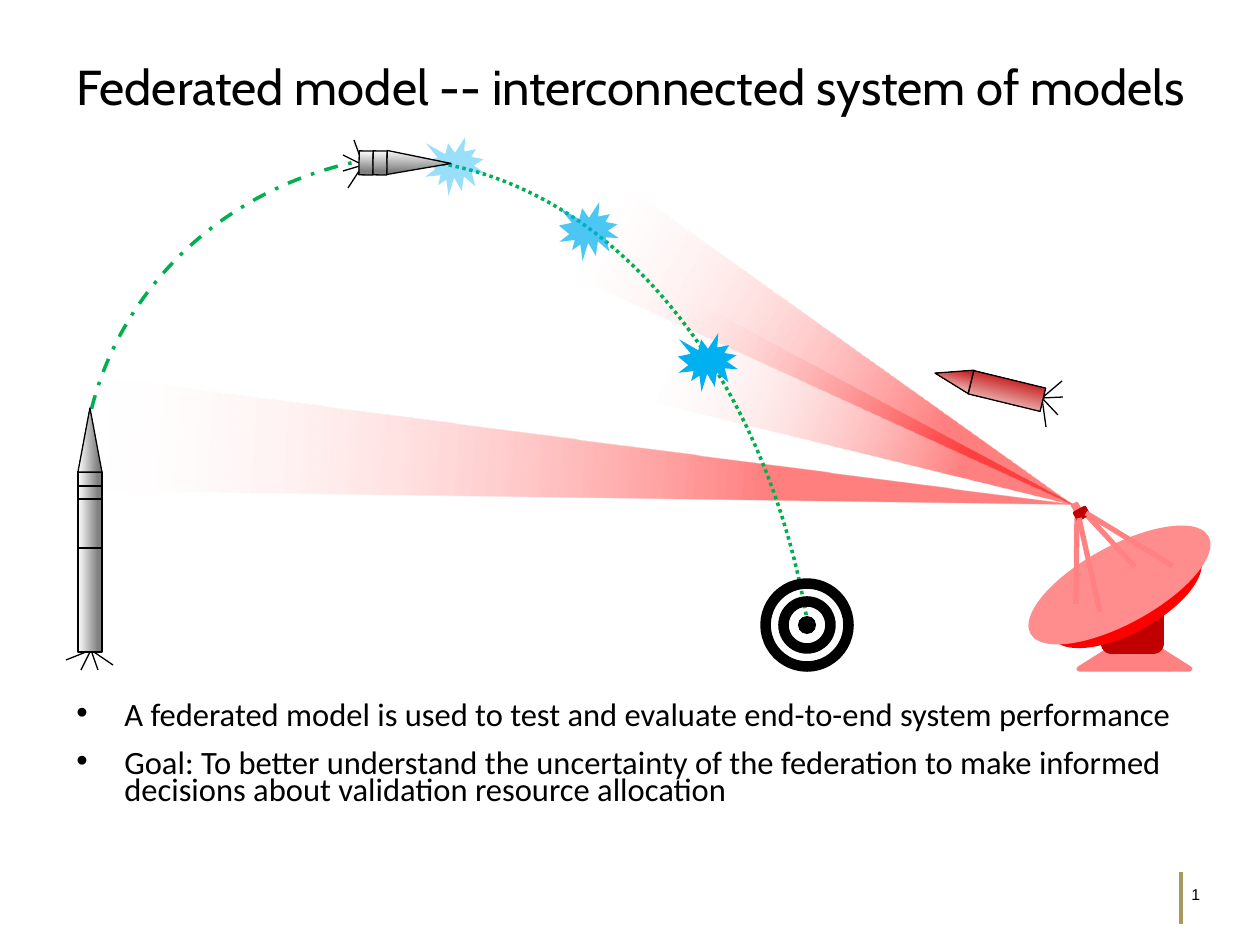
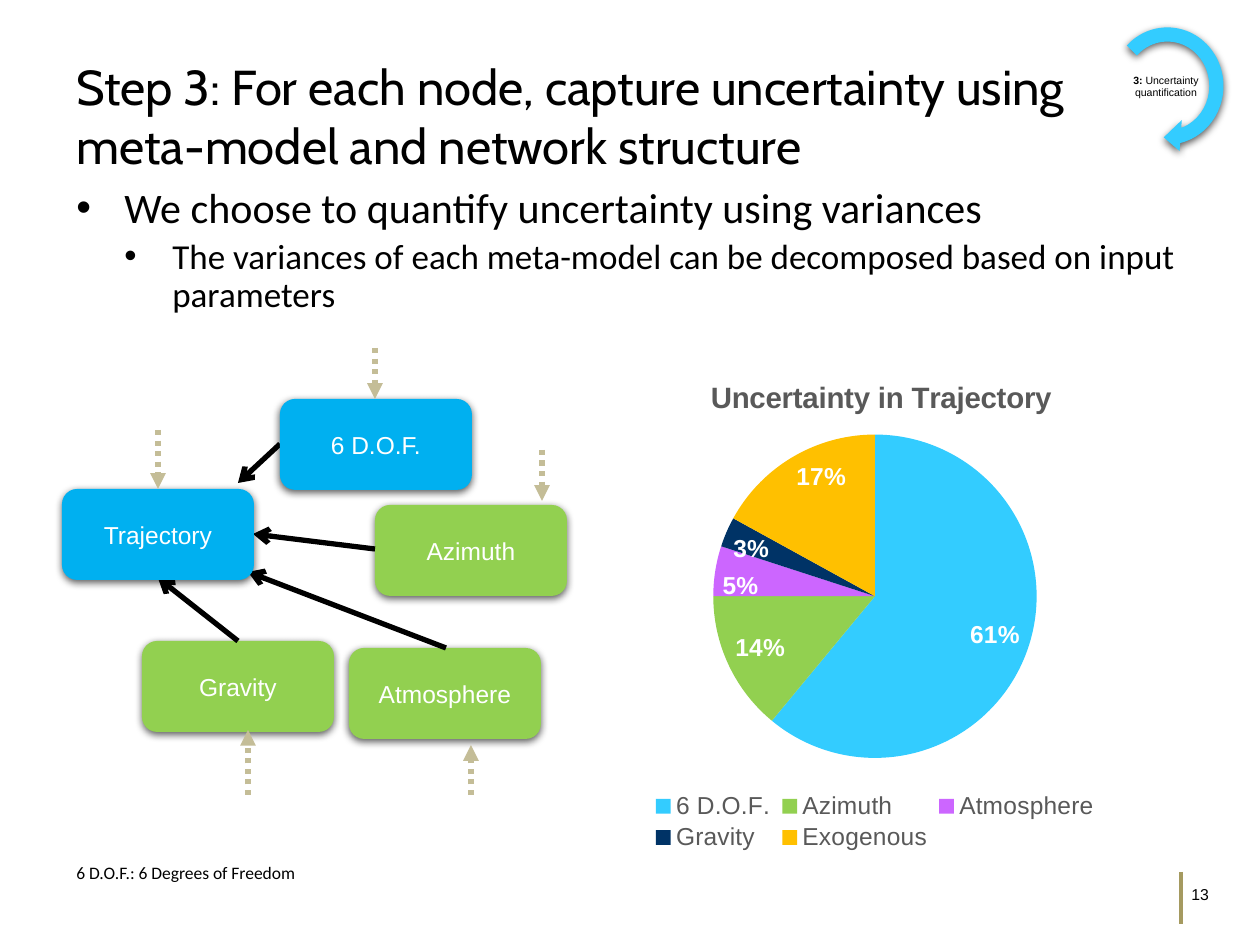
from lxml import etree
from pptx import Presentation
from pptx.chart.data import CategoryChartData
from pptx.dml.color import RGBColor
from pptx.enum.chart import XL_CHART_TYPE, XL_LABEL_POSITION, XL_LEGEND_POSITION
from pptx.enum.dml import MSO_LINE
from pptx.enum.shapes import MSO_CONNECTOR, MSO_SHAPE
from pptx.enum.text import MSO_ANCHOR, PP_ALIGN
from pptx.oxml.ns import qn
from pptx.util import Emu, Pt

RECT, ROUNDED = MSO_SHAPE.RECTANGLE, MSO_SHAPE.ROUNDED_RECTANGLE
TRIANGLE, OVAL = MSO_SHAPE.ISOSCELES_TRIANGLE, MSO_SHAPE.OVAL
CHORD, ARC = MSO_SHAPE.CHORD, MSO_SHAPE.ARC
BURST, CYCLE_ARROW = MSO_SHAPE.EXPLOSION1, MSO_SHAPE.CIRCULAR_ARROW
STRAIGHT = MSO_CONNECTOR.STRAIGHT
DASH_DOT, DOTTED = MSO_LINE.DASH_DOT, MSO_LINE.ROUND_DOT
MIDDLE, CENTER = MSO_ANCHOR.MIDDLE, PP_ALIGN.CENTER
PIE, INSIDE_END = XL_CHART_TYPE.PIE, XL_LABEL_POSITION.INSIDE_END
BOTTOM = XL_LEGEND_POSITION.BOTTOM

EMU_PER_PX = 914400 / 126
COLORS = {
    "black": "000000", "white": "FFFFFF", "grey": "808080", "chart_text": "595959",
    "khaki": "A59A60", "sand": "C4BD97", "blue": "00B0F0", "sky": "33CCFF",
    "green": "92D050", "path_green": "00B050", "violet": "CC66FF",
    "navy": "003366", "amber": "FFC000",
    "red": "FF0000", "dark_red": "C00000", "pink": "FF8181", "dish": "FF8D8D",
}

# Gradients: (position, colour, opacity) stops, then clockwise angle
BEAM = ((0.31, "red", 50), (1, "white", 0)), 90
STEEL = ((0.16, "grey", 100), (1, "white", 100)), 180
RED_STEEL = ((0.16, "dark_red", 100), (1, "white", 100)), 180

# Slide 1
FEDERATION_TITLE = "Federated model -- interconnected system of models"
FEDERATION_BULLETS = [
    "A federated model is used to test and evaluate end-to-end system performance",
    "Goal: To better understand the uncertainty of the federation to make informed "
    "decisions about validation resource allocation",
]
BEAMS = [((519, -33, 115, 1003), 94.1), ((788, 101, 103, 538), 120),
         ((823, 215, 107, 428), 110.8)]
DISH_TILT = 331.4
DISH_STRUTS = [((1085, 513), (1135, 567)), ((1077, 518), (1076, 604))]
FRONT_STRUTS = [((1079, 518), (1100, 612)), ((1086, 513), (1173, 566))]
ROCKETS = [
    {"hub": (1042, 398), "fins": [(1063, 397), (1046, 427), (1062, 381), (1058, 415)],
     "metal": RED_STEEL, "turn": 283.7,
     "stages": [(995, 354, 24, 74)], "nose": (941, 359, 24, 37)},
    {"hub": (91, 650), "fins": [(98, 670), (66, 660), (113, 665), (81, 670)],
     "metal": STEEL, "turn": 0,
     "stages": [(78, 548, 24, 104), (78, 499, 24, 49), (78, 486, 24, 13),
                (78, 472, 24, 14)], "nose": (78, 408, 24, 64)},
    {"hub": (363, 165), "fins": [(343, 171), (354, 140), (348, 188), (343, 155)],
     "metal": STEEL, "turn": 90.9,
     "stages": [(354, 156, 24, 14), (368, 156, 24, 14)], "nose": (407, 131, 24, 64)},
]
TARGET_CENTER, TARGET_RINGS, BULLSEYE = (807, 625), (83, 47), 18
BURSTS = [(425, 137, 40), (559, 202, 70), (678, 333, 100)]

# Slide 2
STEP_TITLE = ("Step 3: For each node, capture uncertainty using meta-model "
              "and network structure")
STEP_BULLETS = [
    "We choose to quantify uncertainty using variances",
    "The variances of each meta-model can be decomposed based on input parameters",
]
FOOTNOTE = "6 D.O.F.: 6 Degrees of Freedom"
INPUT_NODES = [("Gravity", 142, 641), ("Atmosphere", 349, 648), ("Azimuth", 375, 505)]
MAIN_NODES = [("Trajectory", 62, 489), ("6 D.O.F.", 280, 399)]
NODE_SIZE = (192, 91)
NODE_ARROWS = [((280, 444), (238, 483)), ((375, 549), (253, 534)),
               ((446, 648), (248, 572)), ((238, 641), (158, 578))]
OUTSIDE_ARROWS = [(158, 430, 489), (375, 348, 399), (542, 450, 501),
                  (471, 795, 745), (248, 795, 730)]  # x, from y, to y
UNCERTAINTY = [("6 D.O.F.", 61, "sky"), ("Azimuth", 14, "green"),
               ("Atmosphere", 5, "violet"), ("Gravity", 3, "navy"),
               ("Exogenous", 17, "amber")]


def px(value):
    return Emu(round(value * EMU_PER_PX))


def rgb(name):
    return RGBColor.from_string(COLORS[name])


def style_font(font, size, color="black", face="Arial", bold=False):
    font.size, font.name, font.bold = Pt(size), face, bold
    font.color.rgb = rgb(color)


def write(frame, paragraphs, size=14, color="black", face="Arial", align=None,
          anchor=None, spacing=None, before=0, bullets=False, inset=None):
    """Fill a text frame. A paragraph is a string or a list of (text, bold) runs;
    size and before may be lists with one entry per paragraph, and each
    different size then marks a deeper bullet level."""
    frame.word_wrap = True
    if anchor is not None:
        frame.vertical_anchor = anchor
    if inset is not None:
        frame.margin_left = frame.margin_right = px(inset)
        frame.margin_top = frame.margin_bottom = px(inset)
    sizes = size if isinstance(size, list) else [size] * len(paragraphs)
    for index, content in enumerate(paragraphs):
        paragraph = frame.add_paragraph() if index else frame.paragraphs[0]
        if bullets:
            level = sorted(set(sizes), reverse=True).index(sizes[index])
            paragraph.level = level
            properties = paragraph._p.get_or_add_pPr()
            properties.set("marL", str(px(48 * (level + 1))))
            properties.set("indent", str(px(-48)))
            etree.SubElement(properties, qn("a:buFont"), typeface="Arial")
            etree.SubElement(properties, qn("a:buChar"), char="•")
        if align is not None:
            paragraph.alignment = align
        if spacing:
            paragraph.line_spacing = spacing
        if index and before:
            paragraph.space_before = Pt(before)
        for words, bold in [(content, False)] if isinstance(content, str) else content:
            run = paragraph.add_run()
            run.text = words
            style_font(run.font, sizes[index], color, face, bold)


def text_box(slide, box, paragraphs, **style):
    frame = slide.shapes.add_textbox(*map(px, box)).text_frame
    write(frame, paragraphs, **style)


def shape(slide, kind, box, fill=None, opacity=100, line=None, width=0.75, dash=None,
          turn=0, adjust=(), shadow=False):
    """Draw a preset shape; fill is a colour name, a gradient or None."""
    drawn = slide.shapes.add_shape(kind, *map(px, box))
    drawn.rotation = turn
    for index, value in enumerate(adjust):
        drawn.adjustments[index] = value
    opacities = [opacity]
    if fill is None:
        drawn.fill.background()
    elif isinstance(fill, str):
        drawn.fill.solid()
        drawn.fill.fore_color.rgb = rgb(fill)
    else:
        stops, angle = fill
        drawn.fill.gradient()
        drawn.fill.gradient_angle = 360 - angle
        for stop, (position, color, _) in zip(drawn.fill.gradient_stops, stops):
            stop.position, stop.color.rgb = position, rgb(color)
        opacities = [stop[2] for stop in stops]
    properties = drawn._element.spPr
    for color, percent in zip(properties.iter(qn("a:srgbClr")), opacities):
        if percent < 100:
            etree.SubElement(color, qn("a:alpha"), val=str(percent * 1000))
    if line:
        drawn.line.color.rgb, drawn.line.width = rgb(line), Pt(width)
        if dash:
            drawn.line.dash_style = dash
    else:
        drawn.line.fill.background()
    drawn.shadow.inherit = False
    if shadow:
        outer = etree.SubElement(
            properties.find(qn("a:effectLst")), qn("a:outerShdw"), blurRad=str(Pt(4.5)),
            dist=str(Pt(1.5)), dir="5400000", rotWithShape="0")
        color = etree.SubElement(outer, qn("a:srgbClr"), val=COLORS["black"])
        etree.SubElement(color, qn("a:alpha"), val="63000")
    return drawn


def connect(slide, start, end, color="black", width=0.75, dash=None, head=None):
    connector = slide.shapes.add_connector(STRAIGHT, *map(px, (*start, *end)))
    connector.line.color.rgb, connector.line.width = rgb(color), Pt(width)
    if dash:
        connector.line.dash_style = dash
    properties = connector._element.spPr
    if head:
        etree.SubElement(properties.find(qn("a:ln")), qn("a:tailEnd"), type=head)
    etree.SubElement(properties, qn("a:effectLst"))


def new_slide(deck, title, title_height, number):
    slide = deck.slides.add_slide(deck.slide_layouts[6])
    text_box(slide, (1179, 879, 60, 34), [number], size=9)
    connect(slide, (1181, 872), (1181, 924), "khaki", 2)
    text_box(slide, (64, 50, 1134, title_height), [title], size=28, face="Cabin")
    return slide


def draw_radar(slide):
    shape(slide, TRIANGLE, (1079, 634, 111, 35), "pink", line="pink", width=3)
    shape(slide, ROUNDED, (1101, 592, 63, 62), "dark_red")
    shape(slide, CHORD, (1042, 561, 168, 72), "red", turn=DISH_TILT,
          adjust=(209.02, 115))
    shape(slide, OVAL, (1018, 546, 203, 78), "dish", turn=DISH_TILT)
    for start, end in DISH_STRUTS:
        connect(slide, start, end, "pink", 3)
    shape(slide, ROUNDED, (1071, 504, 11, 8), "pink", turn=61.4)
    shape(slide, ROUNDED, (1074, 508, 15, 11), "dark_red", turn=DISH_TILT)
    for start, end in FRONT_STRUTS:
        connect(slide, start, end, "pink", 3)


def draw_rocket(slide, rocket):
    for tip in rocket["fins"]:
        connect(slide, rocket["hub"], tip)
    parts = [(RECT, box) for box in rocket["stages"]] + [(TRIANGLE, rocket["nose"])]
    for kind, box in parts:
        shape(slide, kind, box, rocket["metal"], line="black", turn=rocket["turn"])


def draw_target(slide):
    x, y = TARGET_CENTER
    for size in (*TARGET_RINGS, BULLSEYE):
        box = (x - size / 2, y - size / 2, size, size)
        if size == BULLSEYE:
            shape(slide, OVAL, box, "black")
        else:
            shape(slide, OVAL, box, line="black", width=6)


def draw_node(slide, label, x, y, color):
    node = shape(slide, ROUNDED, (x, y, *NODE_SIZE), color, shadow=True)
    write(node.text_frame, [label], color="white", align=CENTER, anchor=MIDDLE, inset=0)


def place(element, index, **fractions):
    """Give a chart part a manual layout in fractions of the chart."""
    for old in element.findall(qn("c:layout")):
        element.remove(old)
    layout = etree.Element(qn("c:layout"))
    manual = etree.SubElement(layout, qn("c:manualLayout"))
    if element.tag == qn("c:plotArea"):
        etree.SubElement(manual, qn("c:layoutTarget"), val="inner")
    for side in "xy":
        etree.SubElement(manual, qn(f"c:{side}Mode"), val="edge")
    for side, value in fractions.items():
        etree.SubElement(manual, qn(f"c:{side}"), val=str(value))
    element.insert(index, layout)


def draw_pie(slide):
    names, shares, colors = zip(*UNCERTAINTY)
    data = CategoryChartData()
    data.categories = names
    data.add_series("Series 1", shares)
    chart = slide.shapes.add_chart(PIE, *map(px, (490, 348, 770, 507)), data).chart
    style_font(chart.font, 14)
    chart.has_title = True
    write(chart.chart_title.text_frame, [[("Uncertainty in Trajectory", True)]],
          size=16.8, color="chart_text")
    chart.has_legend = True
    chart.legend.position, chart.legend.include_in_layout = BOTTOM, False
    style_font(chart.legend.font, 14, "chart_text")
    plot = chart.plots[0]
    plot.vary_by_categories = True
    for index, color in enumerate(colors):
        wedge = plot.series[0].points[index].format.fill
        wedge.solid()
        wedge.fore_color.rgb = rgb(color)
    plot.has_data_labels = True
    labels = plot.data_labels
    labels.show_percentage, labels.show_value = True, False
    labels.number_format, labels.number_format_is_linked = "0%", False
    labels.position = INSIDE_END
    style_font(labels.font, 14, "white", bold=True)
    place(chart.chart_title._element, 1, x=0.28, y=0.05)
    place(chart.legend._element, 1, x=0.2, y=0.87, w=0.6, h=0.13)
    place(chart._chartSpace.chart.plotArea, 0, x=0.29, y=0.17, w=0.42, h=0.64)


def build_federation(deck):
    slide = new_slide(deck, FEDERATION_TITLE, 72, "1")
    text_box(slide, (64, 698, 1134, 146), FEDERATION_BULLETS, size=18.6,
             face="Calibri", spacing=0.7, before=12, bullets=True)
    for box, turn in BEAMS:
        shape(slide, TRIANGLE, box, BEAM, turn=turn)
    draw_radar(slide)
    missile, *launchers = ROCKETS
    draw_rocket(slide, missile)
    shape(slide, ARC, (100, 136, 663, 699), line="path_green", width=2, dash=DASH_DOT,
          turn=270, adjust=(162, 210.58))
    shape(slide, ARC, (-43, 159, 862, 1203), line="path_green", width=2, dash=DOTTED,
          adjust=(164.28, 205.03))
    draw_target(slide)
    for x, y, opacity in BURSTS:
        shape(slide, BURST, (x, y, 60, 59), "blue", opacity)
    for rocket in launchers:
        draw_rocket(slide, rocket)


def build_step(deck):
    slide = new_slide(deck, STEP_TITLE, 131, "13")
    text_box(slide, (64, 181, 1134, 655), STEP_BULLETS, size=[24, 20], face="Calibri",
             spacing=0.9, before=3.8, bullets=True)
    text_box(slide, (64, 856, 1009, 76), [FOOTNOTE], size=10, face="Calibri")
    draw_pie(slide)
    for node in INPUT_NODES:
        draw_node(slide, *node, "green")
    for start, end in NODE_ARROWS:
        connect(slide, start, end, width=3, head="arrow")
    for node in MAIN_NODES:
        draw_node(slide, *node, "blue")
    for x, top, tip in OUTSIDE_ARROWS:
        connect(slide, (x, top), (x, tip), "sand", 3, DOTTED, "triangle")
    shape(slide, CYCLE_ARROW, (1103, 19, 129, 134), "sky", shadow=True,
          adjust=(0.11, 11.42, 45, 135, 0.12))
    text_box(slide, (1130, 68, 72, 38),
             [[("3:", True), (" Uncertainty quantification", False)]], size=6,
             align=CENTER, anchor=MIDDLE, spacing=0.9, inset=0)


def main():
    deck = Presentation()
    deck.slide_width, deck.slide_height = px(1260), px(945)
    build_federation(deck)
    build_step(deck)
    deck.save("out.pptx")


if __name__ == "__main__":
    main()
